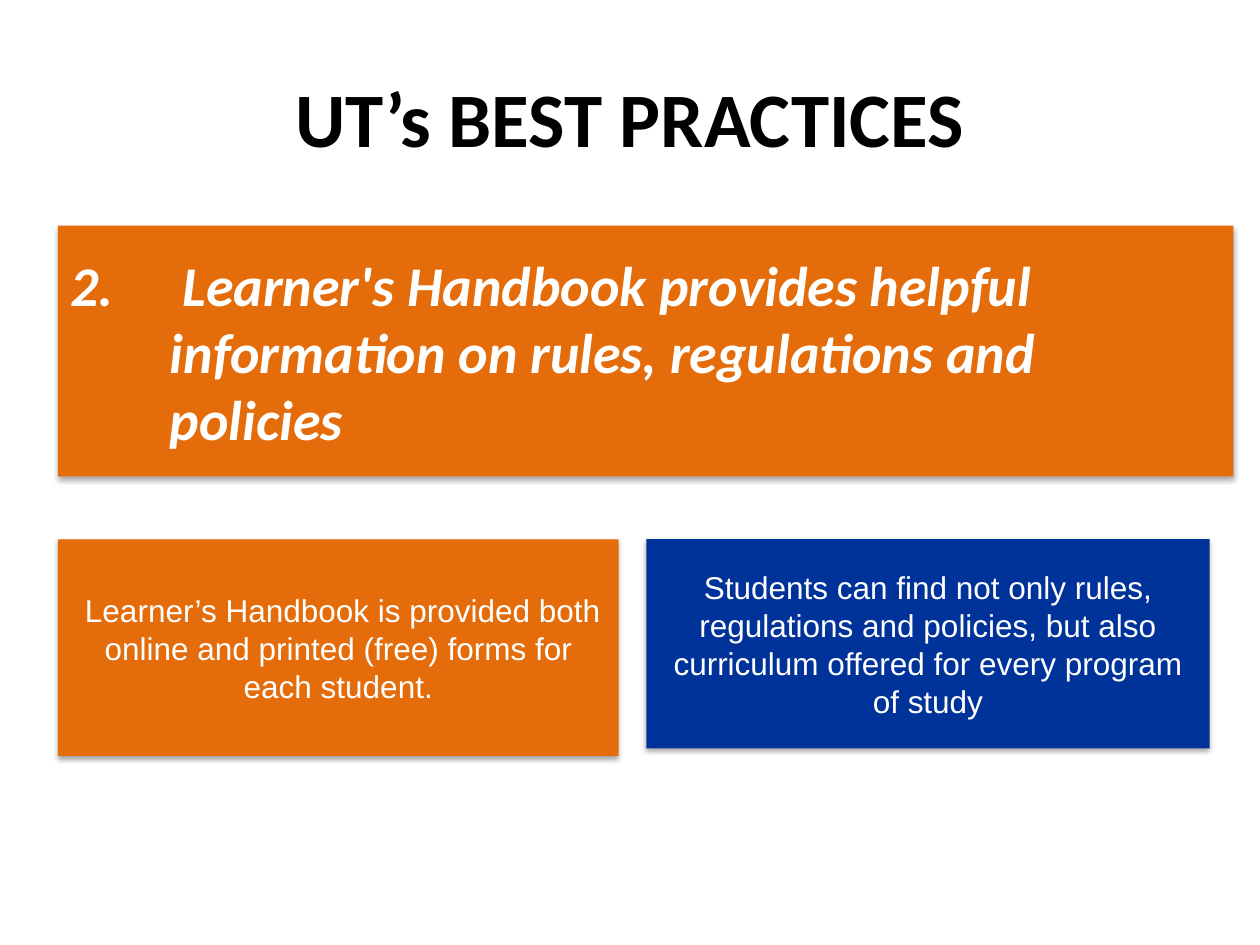
from lxml import etree
from pptx import Presentation
from pptx.dml.color import RGBColor
from pptx.enum.shapes import MSO_SHAPE
from pptx.enum.text import MSO_ANCHOR, PP_ALIGN
from pptx.oxml.ns import qn
from pptx.util import Inches, Pt

RECT = MSO_SHAPE.RECTANGLE
MIDDLE = MSO_ANCHOR.MIDDLE
LEFT, CENTER = PP_ALIGN.LEFT, PP_ALIGN.CENTER

BLACK = RGBColor(0x00, 0x00, 0x00)
WHITE = RGBColor(0xFF, 0xFF, 0xFF)
ORANGE = RGBColor(0xE4, 0x6C, 0x0A)
BLUE = RGBColor(0x00, 0x33, 0x99)

TITLE_FONT = {"name": "Calibri", "size": Pt(44), "bold": True}
HEADING_FONT = {"name": "Calibri", "size": Pt(32), "bold": True, "italic": True}
BODY_FONT = {"name": "Arial", "size": Pt(18)}


def write_text(shape, text, font, color, align):
    tf = shape.text_frame
    tf.word_wrap = True
    tf.vertical_anchor = MIDDLE
    p = tf.paragraphs[0]
    p.alignment = align
    r = p.add_run()
    r.text = text
    for name, value in font.items():
        setattr(r.font, name, value)
    r.font.color.rgb = color
    return p


def add_shadow(shape):
    shape.shadow.inherit = False
    effects = shape._element.spPr.find(qn("a:effectLst"))
    shadow = etree.SubElement(
        effects, qn("a:outerShdw"), blurRad=str(Pt(3.1)), dist=str(Pt(1.8)),
        dir="5400000", rotWithShape="0")
    color = etree.SubElement(shadow, qn("a:srgbClr"), val=str(BLACK))
    etree.SubElement(color, qn("a:alpha"), val="35000")


def add_title(s, text):
    box = s.shapes.add_textbox(Inches(0.5), Inches(0.3), Inches(9), Inches(1.25))
    write_text(box, text, TITLE_FONT, BLACK, CENTER)


def add_panel(s, bounds, fill, text, font, align):
    sp = s.shapes.add_shape(RECT, *[Inches(value) for value in bounds])
    sp.fill.solid()
    sp.fill.fore_color.rgb = fill
    sp.line.fill.background()
    add_shadow(sp)
    return write_text(sp, text, font, WHITE, align)


def set_hanging_indent(p, indent):
    properties = p._p.get_or_add_pPr()
    properties.set("marL", str(Inches(indent)))
    properties.set("indent", str(-Inches(indent)))


def main():
    prs = Presentation()
    prs.slide_width, prs.slide_height = Inches(10), Inches(7.5)
    s = prs.slides.add_slide(prs.slide_layouts[6])

    add_title(s, "UT’s BEST PRACTICES")
    heading = add_panel(
        s, (0.46, 1.79, 9.33, 1.99), ORANGE,
        "2.\t Learner's Handbook provides helpful information on rules, "
        "regulations and policies", HEADING_FONT, LEFT)
    set_hanging_indent(heading, 0.79)

    add_panel(
        s, (0.46, 4.28, 4.45, 1.72), ORANGE,
        " Learner’s Handbook is provided both online and printed (free) forms "
        "for each student.", BODY_FONT, CENTER)
    add_panel(
        s, (5.13, 4.28, 4.47, 1.66), BLUE,
        "Students can find not only rules, regulations and policies, but also "
        "curriculum offered for every program of study", BODY_FONT, CENTER)

    prs.save("out.pptx")


if __name__ == "__main__":
    main()
